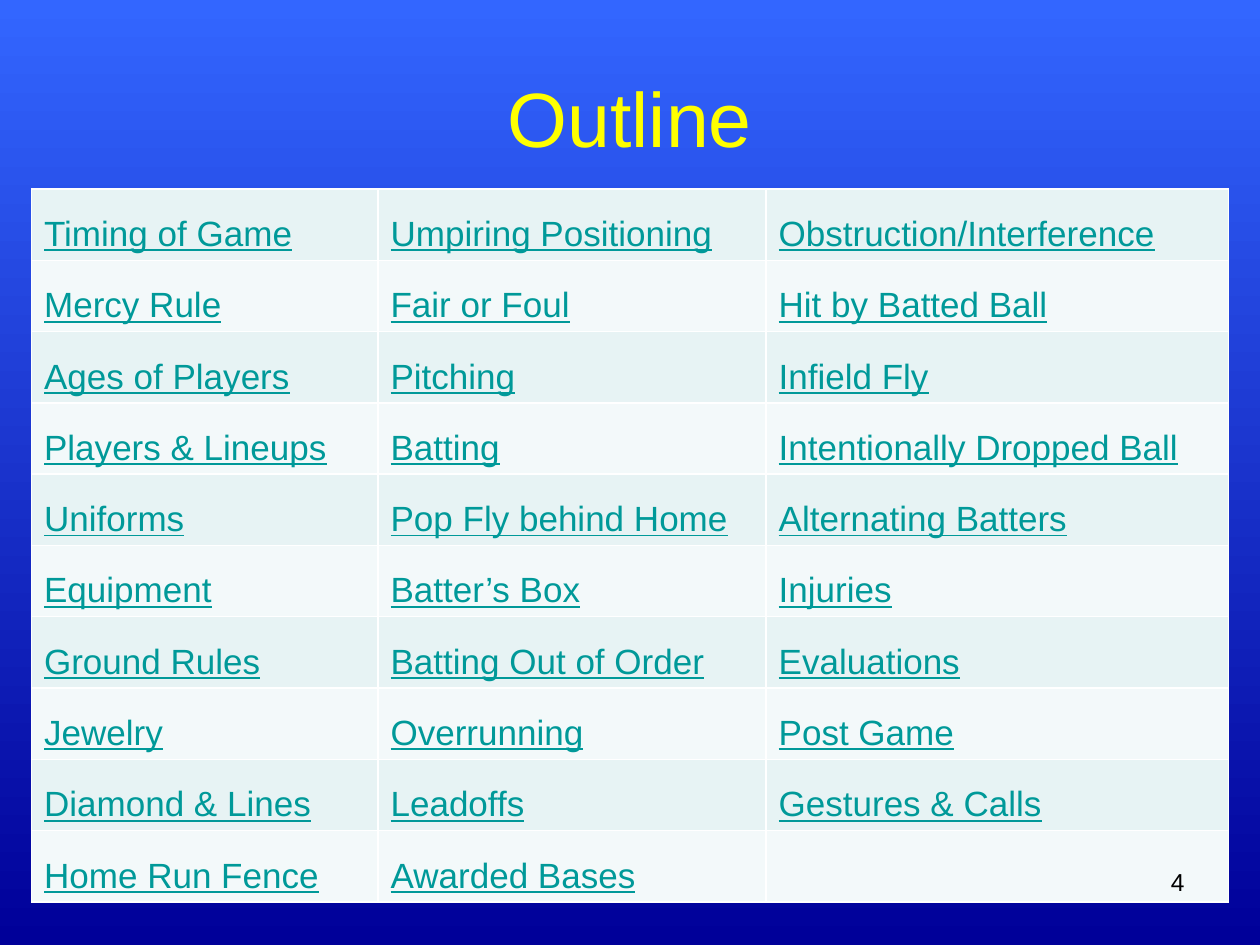
from lxml.etree import SubElement
from pptx import Presentation
from pptx.dml.color import RGBColor
from pptx.enum.text import MSO_ANCHOR, PP_ALIGN
from pptx.oxml.ns import qn
from pptx.util import Inches, Pt

TITLE = "Outline"
PAGE = "4"
TOPICS = [
    ("Timing of Game", "Umpiring Positioning", "Obstruction/Interference"),
    ("Mercy Rule", "Fair or Foul", "Hit by Batted Ball"),
    ("Ages of Players", "Pitching", "Infield Fly"),
    ("Players & Lineups", "Batting", "Intentionally Dropped Ball"),
    ("Uniforms", "Pop Fly behind Home", "Alternating Batters"),
    ("Equipment", "Batter’s Box", "Injuries"),
    ("Ground Rules", "Batting Out of Order", "Evaluations"),
    ("Jewelry", "Overrunning", "Post Game"),
    ("Diamond & Lines", "Leadoffs", "Gestures & Calls"),
    ("Home Run Fence", "Awarded Bases", ""),
]
COLORS = {
    "sky": "3366FF", "navy": "000099", "title": "FFFF00", "topic": "009999",
    "odd": "E7F3F4", "even": "F3F9FA", "border": "FFFFFF", "page": "000000",
}
COLUMN_WIDTHS = [2.75, 3.08, 3.67]
TABLE_HEIGHT = 5.66
TITLE_BOX = (0.5, 0.3, 9, 1.25)
PAGE_BOX = (7.17, 6.83, 2.33, 0.52)
FORMATS = {
    "title": {"size": Pt(44)},
    "topic": {"size": Pt(20), "underline": True},
    "page": {"size": Pt(14)},
}


def color(name):
    return RGBColor.from_string(COLORS[name])


def write(frame, text, role, **paragraph_format):
    frame.text = text
    paragraph = frame.paragraphs[0]
    for key, value in paragraph_format.items():
        setattr(paragraph, key, value)
    for run in paragraph.runs:
        run.font.name = "Arial"
        run.font.color.rgb = color(role)
        for key, value in FORMATS[role].items():
            setattr(run.font, key, value)


def add_borders(cell):
    properties = cell._tc.get_or_add_tcPr()
    for side in ("lnL", "lnR", "lnT", "lnB"):
        line = SubElement(properties, qn(f"a:{side}"), w=str(Pt(1)))
        fill = SubElement(line, qn("a:solidFill"))
        SubElement(fill, qn("a:srgbClr"), val=COLORS["border"])


def add_topics(slide):
    table = slide.shapes.add_table(
        len(TOPICS), len(COLUMN_WIDTHS), Inches(0.25), Inches(1.5),
        Inches(sum(COLUMN_WIDTHS)), Inches(TABLE_HEIGHT)).table
    table.first_row = table.horz_banding = False
    for column, width in zip(table.columns, COLUMN_WIDTHS):
        column.width = Inches(width)
    for r, topics in enumerate(TOPICS):
        table.rows[r].height = Inches(TABLE_HEIGHT / len(TOPICS))
        for c, topic in enumerate(topics):
            cell = table.cell(r, c)
            add_borders(cell)
            cell.fill.solid()
            cell.fill.fore_color.rgb = color("even" if r % 2 else "odd")
            write(cell.text_frame, topic, "topic", line_spacing=1.5)


def main():
    deck = Presentation()
    deck.slide_width, deck.slide_height = Inches(10), Inches(7.5)
    slide = deck.slides.add_slide(deck.slide_layouts[5])

    background = slide.background.fill
    background.gradient()
    background.gradient_angle = 270
    for stop, name, position in zip(background.gradient_stops, ("sky", "navy"), (0, 1)):
        stop.color.rgb = color(name)
        stop.position = position

    title = slide.shapes.title
    title.left, title.top, title.width, title.height = map(Inches, TITLE_BOX)
    title.text_frame.vertical_anchor = MSO_ANCHOR.MIDDLE
    write(title.text_frame, TITLE, "title", alignment=PP_ALIGN.CENTER)

    add_topics(slide)

    page = slide.shapes.add_textbox(*map(Inches, PAGE_BOX)).text_frame
    page.word_wrap = True
    write(page, PAGE, "page", alignment=PP_ALIGN.RIGHT)

    deck.save("out.pptx")


if __name__ == "__main__":
    main()
